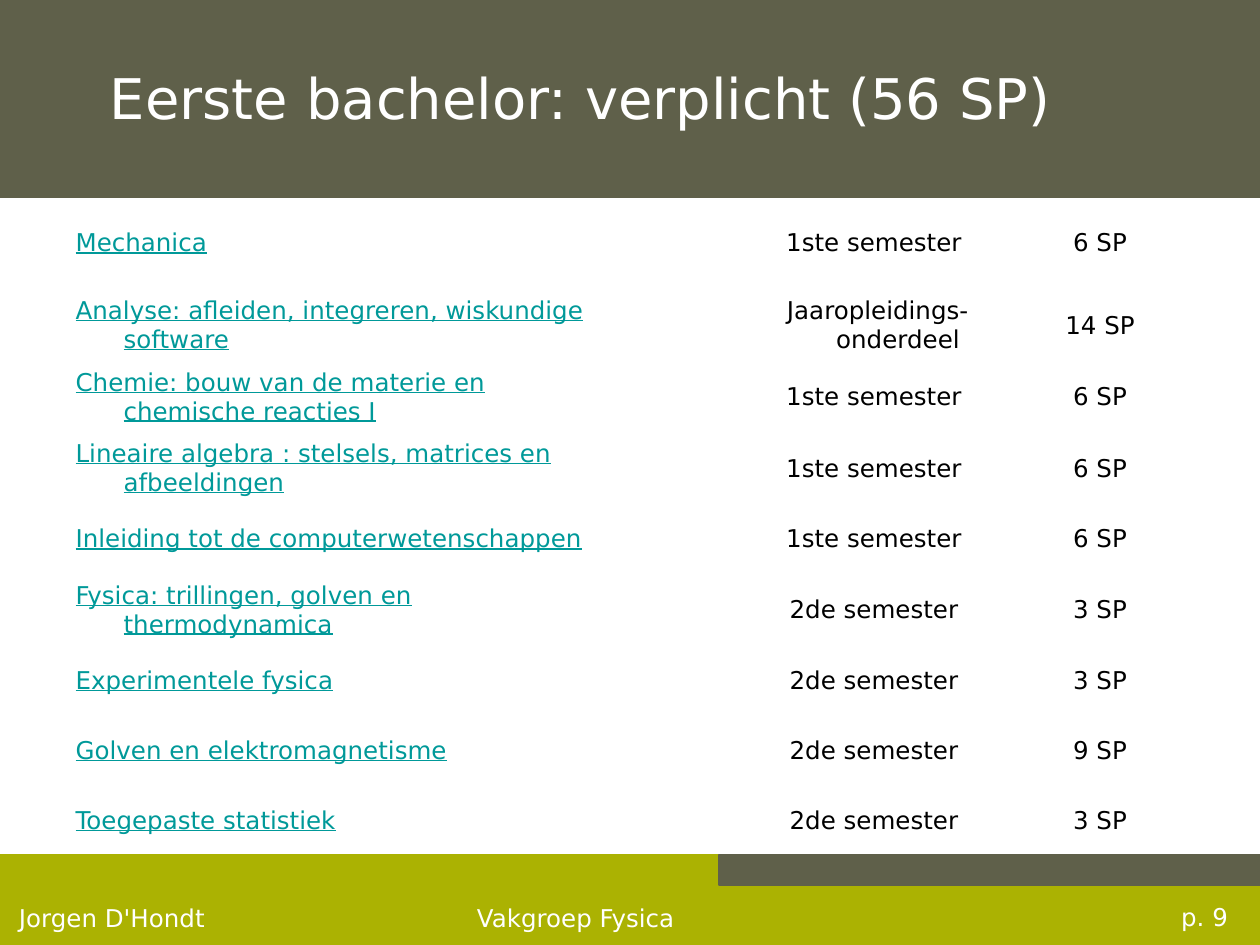
import pptx
import pptx.dml.color
import pptx.enum.shapes
import pptx.enum.text
import pptx.oxml.ns
import pptx.util
from lxml import etree

RGBColor = pptx.dml.color.RGBColor
Align = pptx.enum.text.PP_ALIGN
Anchor = pptx.enum.text.MSO_ANCHOR
qn = pptx.oxml.ns.qn

OLIVE = RGBColor(0x5F, 0x60, 0x4A)
LIME = RGBColor(0xAB, 0xB2, 0x02)
TEAL = RGBColor(0x00, 0x99, 0x99)
WHITE = RGBColor(0xFF, 0xFF, 0xFF)
BLACK = RGBColor(0x00, 0x00, 0x00)
NO_GRID_STYLE = "{2D5ABB26-0587-4C30-8999-92F81FD0307C}"

FIRST, SECOND = "1ste semester ", "2de semester "
COURSES = [
    ("Mechanica", FIRST, 6),
    ("Analyse: afleiden, integreren, wiskundige software",
     "Jaaropleidings-onderdeel ", 14),
    ("Chemie: bouw van de materie en chemische reacties I", FIRST, 6),
    ("Lineaire algebra : stelsels, matrices en afbeeldingen", FIRST, 6),
    ("Inleiding tot de computerwetenschappen", FIRST, 6),
    ("Fysica: trillingen, golven en thermodynamica", SECOND, 3),
    ("Experimentele fysica", SECOND, 3),
    ("Golven en elektromagnetisme", SECOND, 9),
    ("Toegepaste statistiek", SECOND, 3),
]


def px(length):
    return pptx.util.Emu(length * 914400 // 126)


class SlideBuilder:
    font_name = "DejaVu Sans"
    body_size = 14
    title_size = 32
    hanging = 48

    def __init__(self, slide):
        self.slide = slide

    def run(self, paragraph, text, color, size=body_size, underline=False):
        run = paragraph.add_run()
        run.text = text
        run.font.name = self.font_name
        run.font.size = pptx.util.Pt(size)
        run.font.color.rgb = color
        run.font.underline = underline

    def insets(self, frame, left, top, right, bottom):
        frame.margin_left, frame.margin_top = px(left), px(top)
        frame.margin_right, frame.margin_bottom = px(right), px(bottom)

    def title(self, text, left, top, width, height):
        shape = self.slide.shapes.title
        shape.left, shape.top = px(left), px(top)
        shape.width, shape.height = px(width), px(height)
        shape.fill.solid()
        shape.fill.fore_color.rgb = OLIVE
        frame = shape.text_frame
        frame.auto_size = pptx.enum.text.MSO_AUTO_SIZE.NONE
        frame.vertical_anchor = Anchor.TOP
        self.insets(frame, 110, 64, 0, 0)
        paragraph = frame.paragraphs[0]
        paragraph.alignment = Align.LEFT
        self.run(paragraph, text, WHITE, self.title_size)

    def band(self, color, left, top, width, height):
        shape = self.slide.shapes.add_shape(
            pptx.enum.shapes.MSO_SHAPE.RECTANGLE,
            px(left), px(top), px(width), px(height))
        shape.shadow.inherit = False
        shape.fill.solid()
        shape.fill.fore_color.rgb = color
        shape.line.color.rgb = color
        shape.line.width = pptx.util.Pt(0.75)

    def label(self, text, left, top, width, height, align=Align.LEFT,
              anchor=Anchor.TOP, insets=(13, 6, 13, 6), tab_stop=None):
        box = self.slide.shapes.add_textbox(
            px(left), px(top), px(width), px(height))
        frame = box.text_frame
        frame.word_wrap = True
        frame.vertical_anchor = anchor
        self.insets(frame, *insets)
        paragraph = frame.paragraphs[0]
        paragraph.alignment = align
        if tab_stop:
            properties = paragraph._p.get_or_add_pPr()
            tabs = etree.SubElement(properties, qn("a:tabLst"))
            etree.SubElement(tabs, qn("a:tab"), pos=str(px(tab_stop)), algn="l")
        self.run(paragraph, text, WHITE)

    def cell(self, cell, text, color, align, underline=False):
        cell.vertical_anchor = Anchor.MIDDLE
        paragraph = cell.text_frame.paragraphs[0]
        paragraph.alignment = align
        properties = paragraph._p.get_or_add_pPr()
        properties.set("marL", str(px(self.hanging)))
        properties.set("indent", str(-px(self.hanging)))
        self.run(paragraph, text, color, underline=underline)

    def course_table(self, courses, left, top, widths, heights):
        graphic_frame = self.slide.shapes.add_table(
            len(courses), len(widths), px(left), px(top),
            px(sum(widths)), px(sum(heights)))
        table = graphic_frame.table
        table.first_row = table.horz_banding = False
        for style in graphic_frame.element.iter(qn("a:tableStyleId")):
            style.text = NO_GRID_STYLE
        for column, width in zip(table.columns, widths):
            column.width = px(width)
        for row, height, course in zip(table.rows, heights, courses):
            row.height = px(height)
            for cell in row.cells:
                cell.fill.background()
            name, semester, points = course
            self.cell(row.cells[0], name, TEAL, Align.LEFT, underline=True)
            self.cell(row.cells[2], semester, BLACK, Align.CENTER)
            self.cell(row.cells[3], f"{points} SP ", BLACK, Align.CENTER)


def main():
    presentation = pptx.Presentation()
    presentation.slide_width = px(1260)
    presentation.slide_height = px(945)
    slide = presentation.slides.add_slide(presentation.slide_layouts[5])
    builder = SlideBuilder(slide)

    # Footer bands and text
    builder.band(LIME, 0, 855, 1260, 90)
    builder.band(OLIVE, 719, 855, 541, 30)
    builder.label("Jorgen D'Hondt\tVakgroep Fysica", 19, 902, 895, 30,
                  anchor=Anchor.BOTTOM, insets=(0, 0, 0, 0), tab_stop=458)
    builder.label("p. 9", 1126, 896, 115, 49, align=Align.RIGHT)

    # Title
    builder.title("Eerste bachelor: verplicht (56 SP)", 0, 0, 1260, 198)

    # Courses: name, spacer, semester, study points
    heights = [93] + [70] * (len(COURSES) - 1)
    builder.course_table(COURSES, 63, 197, [572, 110, 266, 186], heights)

    presentation.save("out.pptx")


if __name__ == "__main__":
    main()
